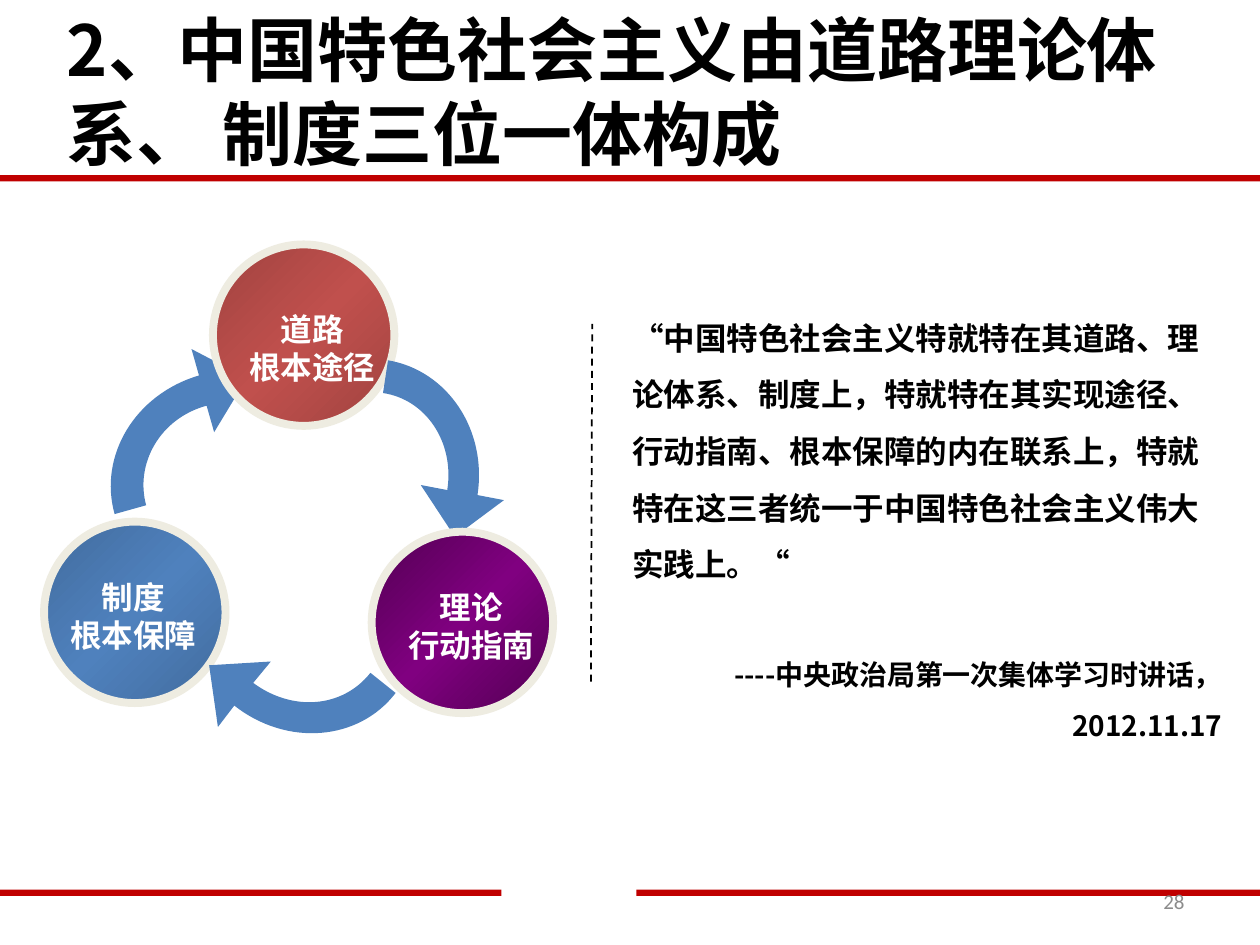
from copy import deepcopy

from lxml import etree
from pptx import Presentation, util as u
from pptx.dml.color import RGBColor
from pptx.enum import dml, shapes, text
from pptx.oxml.ns import qn

SLIDE_W, SLIDE_H = 10, 7.5
CJK, LATIN = "Noto Sans CJK SC", "Calibri"
BLACK, WHITE = RGBColor(0, 0, 0), RGBColor(255, 255, 255)
RED, GREY = RGBColor(0xC0, 0, 0), RGBColor(0x8C, 0x8C, 0x8C)
ARROW_BLUE, RING = RGBColor(0x4F, 0x81, 0xBD), RGBColor(0xEE, 0xEC, 0xE1)
DARK_BLUE = RGBColor(0x42, 0x6C, 0x9E)
BRICK, DARK_BRICK = RGBColor(0xC0, 0x50, 0x4D), RGBColor(0xA1, 0x43, 0x40)
PURPLE, DARK_PURPLE = RGBColor(0x80, 0, 0x80), RGBColor(0x52, 0, 0x52)

# An en space sets the gap before 制度.
TITLE = "2、中国特色社会主义由道路理论体系、 制度三位一体构成"
QUOTE = ("“中国特色社会主义特就特在其道路、理论体系、制度上，"
         "特就特在其实现途径、行动指南、根本保障的内在联系上，"
         "特就特在这三者统一于中国特色社会主义伟大实践上。“")
SOURCE = "----中央政治局第一次集体学习时讲话，2012.11.17"
PAGE = "28"

RULE_H = 0.05
RULES = [(0, 7.06, 3.98), (5.05, 7.06, 4.95), (0, 1.39, SLIDE_W)]

DISC = 1.44
LABEL_W, LABEL_H = 1.26, 0.71
UNITS = 1000  # outline units to the inch
# Each step: disc corner, label corner, label lines, edge and middle colours,
# then the arrow beside it: Bezier points of its inner and outer curve, head.
STEPS = [
    {"disc": (0.35, 4.14), "label": (0.43, 4.54), "lines": ["制度", "根本保障"],
     "colours": (DARK_BLUE, ARROW_BLUE),
     "inner": [(1.64, 3.22), (1.27, 3.32), (1.07, 3.68), (1.16, 4.01)],
     "outer": [(0.91, 4.08), (0.78, 3.62), (1.07, 3.13), (1.58, 2.98)],
     "head": [(1.52, 2.77), (1.96, 3), (1.7, 3.43)]},
    {"disc": (1.69, 1.94), "label": (1.85, 2.41), "lines": ["道路", "根本途径"],
     "colours": (DARK_BRICK, BRICK),
     "inner": [(3.55, 3.89), (3.61, 3.51), (3.38, 3.17), (3.04, 3.12)],
     "outer": [(3.08, 2.86), (3.55, 2.94), (3.87, 3.41), (3.79, 3.93)],
     "head": [(4, 3.97), (3.61, 4.26), (3.34, 3.85)]},
    {"disc": (2.95, 4.22), "label": (3.11, 4.62), "lines": ["理论", "行动指南"],
     "colours": (DARK_PURPLE, PURPLE),
     "inner": [(2.01, 5.42), (2.32, 5.65), (2.72, 5.62), (2.94, 5.34)],
     "outer": [(3.14, 5.5), (2.85, 5.88), (2.28, 5.93), (1.86, 5.6)],
     "head": [(1.73, 5.77), (1.66, 5.28), (2.15, 5.25)]},
]


def inches(*lengths):
    return [u.Inches(length) for length in lengths]


def write(shape, paragraphs, size=18, colour=BLACK, font=CJK, bold=True,
          align=text.PP_ALIGN.LEFT, anchor=text.MSO_ANCHOR.TOP, spacing=None):
    frame = shape.text_frame
    frame.word_wrap = True
    frame.auto_size = text.MSO_AUTO_SIZE.NONE
    frame.vertical_anchor = anchor
    frame.text = "\n".join(paragraphs)
    for paragraph in frame.paragraphs:
        paragraph.alignment = align
        paragraph.line_spacing = spacing
        for run in paragraph.runs:
            run.font.size, run.font.bold = u.Pt(size), bold
            run.font.name, run.font.color.rgb = font, colour
            properties = run.font._element
            properties.set("lang", "zh-CN")
            east_asian = etree.Element(qn("a:ea"), typeface=font)
            properties.find(qn("a:latin")).addnext(east_asian)
    return frame


def add_text(slide, box, paragraphs, **style):
    return write(slide.shapes.add_textbox(*inches(*box)), paragraphs, **style)


def paint(shape, colour):
    shape.shadow.inherit = False
    shape.fill.solid()
    shape.fill.fore_color.rgb = colour
    shape.line.fill.background()


def add_rule(slide, left, top, width):
    paint(slide.shapes.add_shape(shapes.MSO_SHAPE.RECTANGLE,
                                 *inches(left, top, width, RULE_H)), RED)


def add_disc(slide, corner, edge, middle):
    disc = slide.shapes.add_shape(shapes.MSO_SHAPE.OVAL,
                                  *inches(*corner, DISC, DISC))
    disc.shadow.inherit = False
    disc.fill.gradient()
    disc.fill.gradient_angle = 315
    stop_list = disc._element.spPr.find(qn("a:gradFill")).find(qn("a:gsLst"))
    stop_list.insert(1, deepcopy(stop_list[0]))
    for stop, position, colour in zip(disc.fill.gradient_stops, (0, 0.5, 1),
                                      (edge, middle, edge)):
        stop.position, stop.color.rgb = position, colour
    disc.line.color.rgb, disc.line.width = RING, u.Pt(4.5)


def bend(segments):
    """Turn three line segments into one cubic Bezier segment."""
    cubic = etree.Element(qn("a:cubicBezTo"))
    segments[0].addprevious(cubic)
    for segment in segments:
        cubic.append(segment[0])
        segment.getparent().remove(segment)


def add_arrow(slide, inner, outer, head):
    outline = [(round(x * UNITS), round(y * UNITS))
               for x, y in inner + outer + head]
    builder = slide.shapes.build_freeform(*outline[0],
                                          scale=u.Inches(1) / UNITS)
    builder.add_line_segments(outline[1:], close=True)
    arrow = builder.convert_to_shape()
    segments = list(arrow._element.spPr.iter(qn("a:lnTo")))
    bend(segments[0:3])
    bend(segments[4:7])
    paint(arrow, ARROW_BLUE)


def add_divider(slide):
    divider = slide.shapes.add_connector(shapes.MSO_CONNECTOR.STRAIGHT,
                                         *inches(4.69, 5.41, 4.7, 2.57))
    divider.line.color.rgb, divider.line.width = BLACK, u.Pt(1)
    divider.line.dash_style = dml.MSO_LINE.DASH
    etree.SubElement(divider._element.spPr, qn("a:effectLst"))


def main():
    deck = Presentation()
    deck.slide_width, deck.slide_height = inches(SLIDE_W, SLIDE_H)
    slide = deck.slides.add_slide(deck.slide_layouts[5])

    title = slide.shapes.title
    title.left, title.top, title.width, title.height = inches(0.43, 0, 8.9, 1.45)
    write(title, [TITLE], size=40)

    for rule in RULES:
        add_rule(slide, *rule)

    quote = add_text(slide, (4.92, 2.33, 4.88, 3.63), [QUOTE, SOURCE], spacing=1.5)
    source = quote.paragraphs[1]
    source.alignment = text.PP_ALIGN.RIGHT
    source.space_before = u.Pt(33)
    source.runs[0].font.size = u.Pt(16)
    add_divider(slide)

    for step in STEPS:
        add_disc(slide, step["disc"], *step["colours"])
        add_arrow(slide, step["inner"], step["outer"], step["head"])
    for step in STEPS:
        add_text(slide, (*step["label"], LABEL_W, LABEL_H), step["lines"],
                 colour=WHITE, align=text.PP_ALIGN.CENTER)

    add_text(slide, (7.17, 6.95, 2.33, 0.4), [PAGE], size=12, colour=GREY,
             font=LATIN, bold=False, align=text.PP_ALIGN.RIGHT,
             anchor=text.MSO_ANCHOR.MIDDLE)
    deck.save("out.pptx")


if __name__ == "__main__":
    main()
